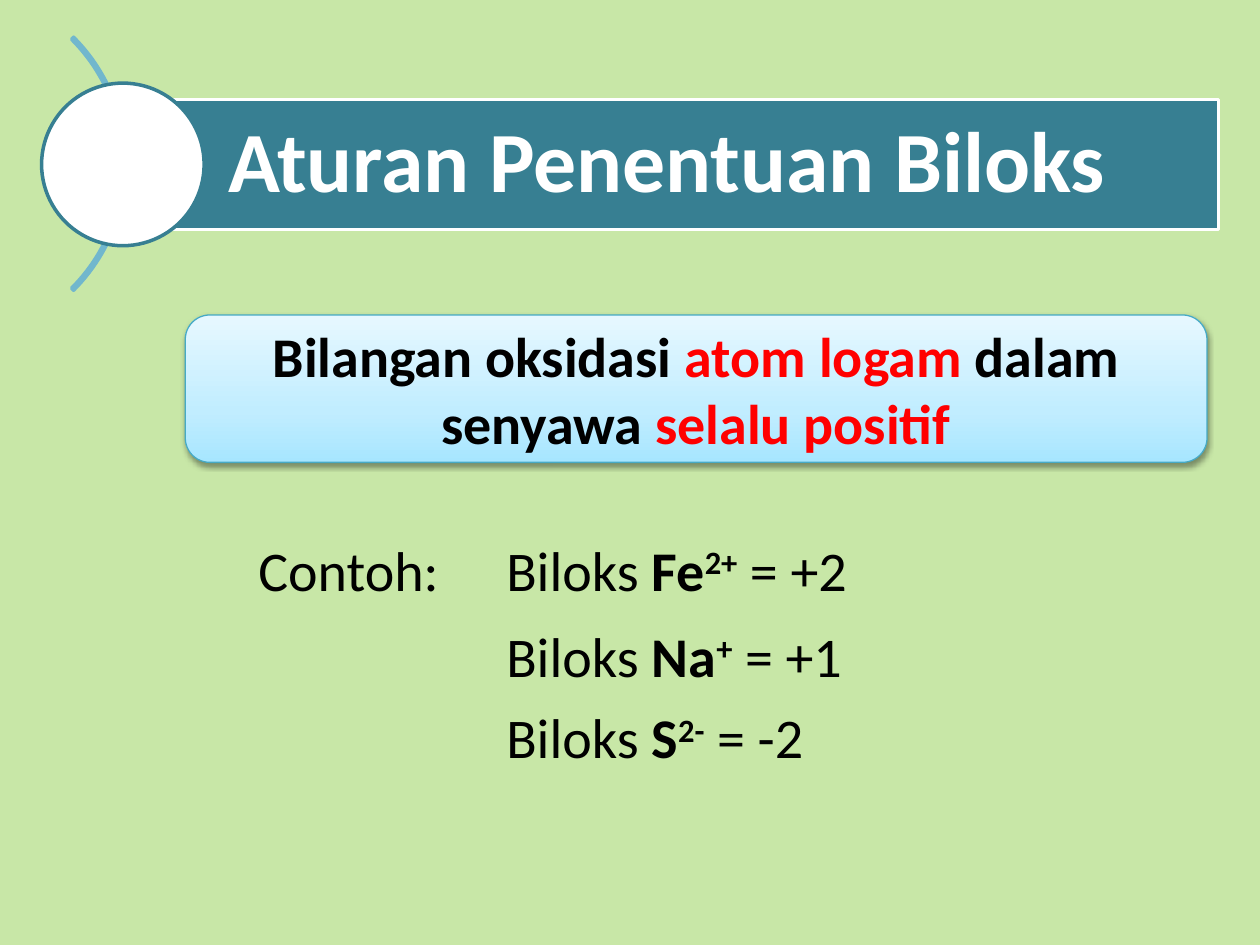
from pptx import Presentation
from pptx.dml.color import RGBColor
from pptx.enum.shapes import MSO_SHAPE
from pptx.enum.text import MSO_ANCHOR, MSO_AUTO_SIZE, PP_ALIGN
from pptx.oxml import parse_xml
from pptx.oxml.ns import nsdecls, qn
from pptx.util import Inches, Pt

TITLE = "Aturan Penentuan Biloks"
RULE = [("Bilangan oksidasi ", "000000"), ("atom logam", "FF0000"),
        (" dalam senyawa ", "000000"), ("selalu positif", "FF0000")]
LABEL = "Contoh:"
IONS = [("Fe", "2+", "+2", 4.2), ("Na", "+", "+1", 4.88), ("S", "2-", "-2", 5.53)]
STOPS = [(0, "A7E6FF"), (35, "C1EDFF"), (100, "E7F8FF")]


def rgb(code):
    """Turn a hex string into a colour."""
    return RGBColor.from_string(code)


def place(item, *box):
    """Move and size a placeholder, in inches."""
    item.left, item.top, item.width, item.height = map(Inches, box)


def paint(item, fill, line, width):
    """Give a shape its fill and outline."""
    if fill:
        item.fill.solid()
        item.fill.fore_color.rgb = rgb(fill)
    item.line.color.rgb = rgb(line)
    item.line.width = Pt(width)


def style(para, size, color="000000", bold=None):
    """Set the font of a paragraph."""
    font = para.font
    font.name, font.size, font.bold = "Calibri", Pt(size), bold
    font.color.rgb = rgb(color)


def draw(slide, kind, box, fill, line, width):
    """Add a preset shape without the theme shadow."""
    item = slide.shapes.add_shape(kind, *map(Inches, box))
    item.shadow.inherit = False
    paint(item, fill, line, width)
    return item


def add_title(slide):
    """Fill the title bar and add its arc and circle."""
    bar = slide.shapes.title
    place(bar, 0.98, 0.79, 8.69, 1.03)
    paint(bar, "377F92", "FFFFFF", 2)
    frame = bar.text_frame
    frame.text = TITLE
    frame.auto_size = MSO_AUTO_SIZE.NONE
    frame.vertical_anchor = MSO_ANCHOR.MIDDLE
    frame.margin_left = Inches(0.83)
    frame.margin_top = frame.margin_right = frame.margin_bottom = Inches(0.14)
    para = frame.paragraphs[0]
    para.alignment, para.line_spacing = PP_ALIGN.LEFT, 0.9
    style(para, 49, "FFFFFF", True)
    arc = draw(slide, MSO_SHAPE.BLOCK_ARC, (-1.84, -0.12, 2.84, 2.84), "71B7CD", "71B7CD", 2)
    for i, value in enumerate((189, 27, 0.008)):
        arc.adjustments[i] = value
    draw(slide, MSO_SHAPE.OVAL, (0.33, 0.66, 1.29, 1.29), "FFFFFF", "377F92", 2)


def add_rule(slide):
    """Add the shaded box with the rule."""
    card = draw(slide, MSO_SHAPE.ROUNDED_RECTANGLE, (1.47, 2.5, 8.11, 1.17),
                None, "46AAC5", 0.75)
    card.fill.gradient()
    card.fill.gradient_angle = 90
    props = card._element.spPr
    stops = props.find(".//" + qn("a:gsLst"))
    for old in list(stops):
        stops.remove(old)
    for pos, code in STOPS:
        stops.append(parse_xml(f'<a:gs {nsdecls("a")} pos="{pos * 1000}">'
                               f'<a:srgbClr val="{code}"/></a:gs>'))
    props.find(qn("a:effectLst")).append(parse_xml(
        f'<a:outerShdw {nsdecls("a")} blurRad="{Pt(3.1)}" dist="{Pt(1.6)}" dir="5400000" '
        'rotWithShape="0"><a:srgbClr val="000000"><a:alpha val="38000"/></a:srgbClr>'
        '</a:outerShdw>'))
    frame = card.text_frame
    frame.word_wrap = True
    frame.vertical_anchor = MSO_ANCHOR.MIDDLE
    para = frame.paragraphs[0]
    para.alignment = PP_ALIGN.CENTER
    style(para, 32, bold=True)
    for text, code in RULE:
        run = para.add_run()
        run.text = text
        run.font.color.rgb = rgb(code)


def add_label(slide):
    """Put the example label in the body placeholder."""
    body = slide.placeholders[1]
    place(body, 1.95, 4.2, 1.88, 0.55)
    frame = body.text_frame
    frame.text = LABEL
    frame.auto_size = MSO_AUTO_SIZE.NONE
    para = frame.paragraphs[0]
    para.space_before = Pt(0)
    props = para._p.get_or_add_pPr()
    props.set("marL", "0")
    props.set("indent", "0")
    props.append(parse_xml(f'<a:buNone {nsdecls("a")}/>'))
    style(para, 32)


def add_ion(slide, atom, charge, value, top):
    """Add one example line with a raised charge."""
    box = slide.shapes.add_textbox(*map(Inches, (3.92, top, 3, 0.64)))
    frame = box.text_frame
    frame.word_wrap = False
    frame.auto_size = MSO_AUTO_SIZE.SHAPE_TO_FIT_TEXT
    para = frame.paragraphs[0]
    style(para, 32)
    parts = [("Biloks ", False), (atom, True), (charge, True), (f" = {value}", False)]
    runs = []
    for text, bold in parts:
        run = para.add_run()
        run.text, run.font.bold = text, bold
        runs.append(run)
    runs[2]._r.get_or_add_rPr().set("baseline", "30000")


def main():
    """Build the slide and save it."""
    deck = Presentation()
    deck.slide_width, deck.slide_height = Inches(10), Inches(7.5)
    slide = deck.slides.add_slide(deck.slide_layouts[1])
    back = slide.background.fill
    back.solid()
    back.fore_color.rgb = rgb("C8E7A7")
    add_title(slide)
    add_rule(slide)
    add_label(slide)
    for ion in IONS:
        add_ion(slide, *ion)
    deck.save("out.pptx")


if __name__ == "__main__":
    main()
